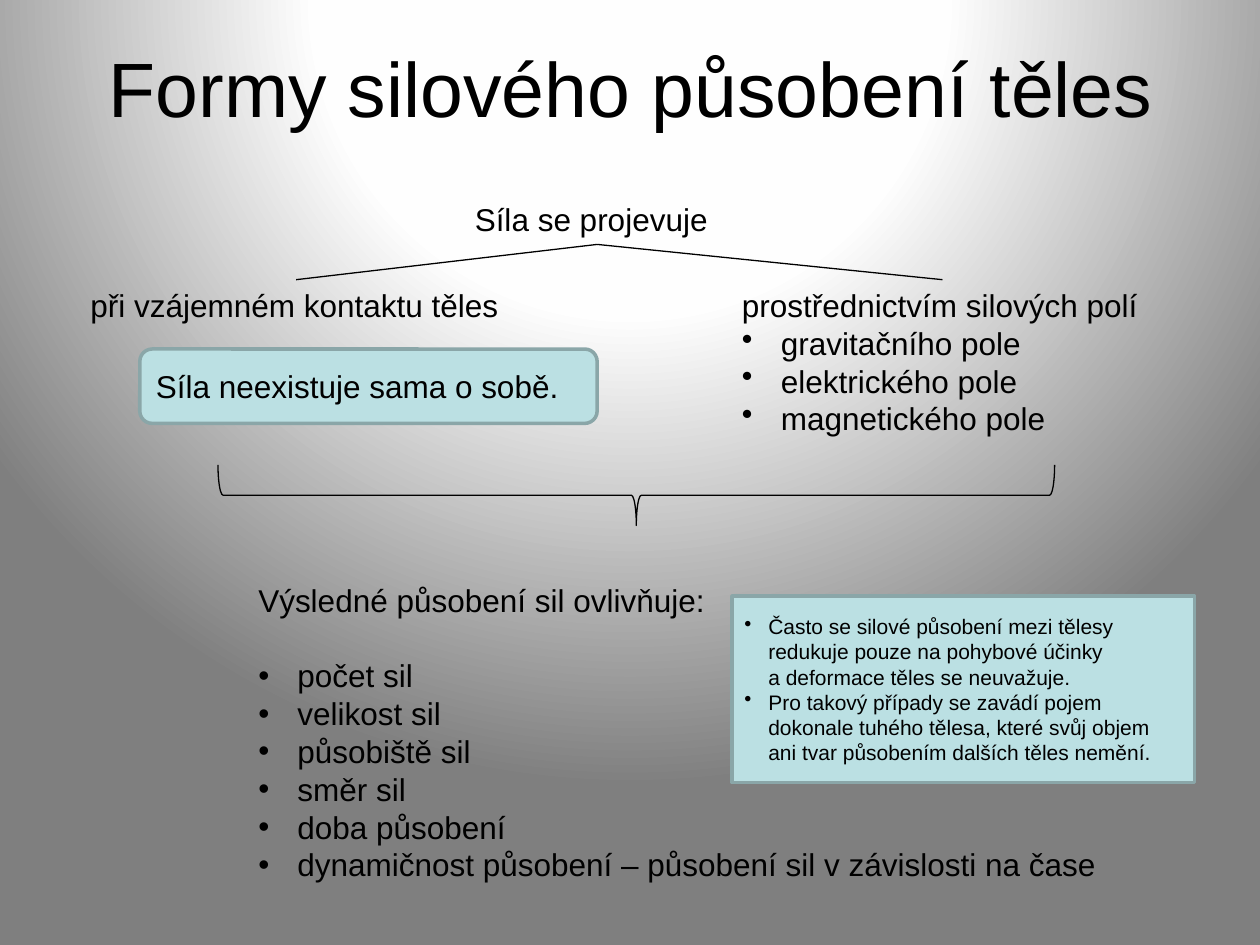
from dataclasses import dataclass

from pptx import Presentation
from pptx.dml.color import RGBColor
from pptx.enum.shapes import MSO_CONNECTOR, MSO_SHAPE
from pptx.enum.text import MSO_ANCHOR, MSO_AUTO_SIZE, PP_ALIGN
from pptx.oxml import parse_xml
from pptx.oxml.ns import nsdecls, qn
from pptx.util import Inches, Pt

RECT, ROUND, BRACE = MSO_SHAPE.RECTANGLE, MSO_SHAPE.ROUNDED_RECTANGLE, MSO_SHAPE.RIGHT_BRACE
LINE = MSO_CONNECTOR.STRAIGHT
TOP, MIDDLE = MSO_ANCHOR.TOP, MSO_ANCHOR.MIDDLE
LEFT, CENTER = PP_ALIGN.LEFT, PP_ALIGN.CENTER
NO_FIT = MSO_AUTO_SIZE.NONE


@dataclass(frozen=True)
class Theme:
    font: str = "Arial"
    ink: str = "000000"
    fill: str = "BBE0E3"
    edge: str = "8AA6A8"
    glow: tuple = ((0, "FFFFFF"), (40, "FEFEFE"), (100, "7F7F7F"))
    head: int = 44
    text: int = 18
    note: int = 12
    thin: float = 0.75
    thick: float = 2


@dataclass(frozen=True)
class Box:
    left: float
    top: float
    width: float
    height: float

    def lengths(self) -> list:
        return [Inches(v) for v in (self.left, self.top, self.width, self.height)]


@dataclass(frozen=True)
class Para:
    text: str
    indent: float = 0  # above zero means a bullet
    after: float = 0


@dataclass(frozen=True)
class Label:
    box: Box
    paras: list


@dataclass(frozen=True)
class Card:
    kind: int
    box: Box
    paras: list
    size: int


THEME = Theme()


def bullets(items: list, indent: float = 0.31) -> list:
    return [Para(item, indent) for item in items]


def set_bullet(para, indent: float) -> None:
    props = para._p.get_or_add_pPr()
    props.set("marL", str(Inches(indent)))
    props.set("indent", str(-Inches(indent)))
    mark = '<a:buChar %s char="•"/>' if indent else "<a:buNone %s/>"
    props.append(parse_xml(mark % nsdecls("a")))


def write(frame, paras: list, size: int, align=LEFT, anchor=TOP, wrap: bool = True) -> None:
    frame.auto_size = NO_FIT
    frame.word_wrap = wrap
    frame.vertical_anchor = anchor
    for i, item in enumerate(paras):
        para = frame.add_paragraph() if i else frame.paragraphs[0]
        para.alignment = align
        para.space_before, para.space_after = Pt(0), Pt(item.after)
        set_bullet(para, item.indent)
        for j, part in enumerate(item.text.split("\n")):
            if j:
                para.add_line_break()
            run = para.add_run()
            run.text = part
            run.font.name, run.font.size = THEME.font, Pt(size)
            run.font.color.rgb = RGBColor.from_string(THEME.ink)


def place(shape, box: Box) -> None:
    shape.left, shape.top, shape.width, shape.height = box.lengths()


def stroke(shape, color: str, width: float) -> None:
    shape.line.color.rgb = RGBColor.from_string(color)
    shape.line.width = Pt(width)


def paint_back(slide) -> None:
    fill = slide.background.fill
    fill.solid()
    stops = "".join(
        f'<a:gs pos="{pos * 1000}"><a:srgbClr val="{color}"/></a:gs>' for pos, color in THEME.glow
    )
    grad = parse_xml(
        f'<a:gradFill {nsdecls("a")} rotWithShape="1"><a:gsLst>{stops}</a:gsLst>'
        '<a:path path="circle"><a:fillToRect l="50000" t="-80000" r="50000" b="180000"/>'
        "</a:path></a:gradFill>"
    )
    props = slide.background._cSld.bg.bgPr
    props.replace(props.find(qn("a:solidFill")), grad)


def add_label(slide, label: Label) -> None:
    shape = slide.shapes.add_textbox(*label.box.lengths())
    write(shape.text_frame, label.paras, THEME.text, wrap=False)


def add_card(slide, card: Card) -> None:
    shape = slide.shapes.add_shape(card.kind, *card.box.lengths())
    shape.shadow.inherit = False
    shape.fill.solid()
    shape.fill.fore_color.rgb = RGBColor.from_string(THEME.fill)
    stroke(shape, THEME.edge, THEME.thick)
    write(shape.text_frame, card.paras, card.size, anchor=MIDDLE)


def add_brace(slide, box: Box) -> None:
    shape = slide.shapes.add_shape(BRACE, *box.lengths())
    shape.shadow.inherit = False
    shape.rotation = 90
    shape.fill.background()
    stroke(shape, THEME.ink, THEME.thin)


def add_branch(slide, start: tuple, end: tuple) -> None:
    line = slide.shapes.add_connector(LINE, *[Inches(v) for v in start + end])
    stroke(line, THEME.ink, THEME.thin)
    line._element.spPr.append(parse_xml(f'<a:effectLst {nsdecls("a")}/>'))


LABELS = [
    Label(Box(3.67, 1.54, 2.14, 0.4), [Para("Síla se projevuje")]),
    Label(Box(0.62, 2.22, 3.47, 0.4), [Para("při vzájemném kontaktu těles")]),
    Label(
        Box(5.79, 2.22, 3.37, 1.31),
        [Para("prostřednictvím silových polí")]
        + bullets(["gravitačního pole", "elektrického pole", "magnetického pole"]),
    ),
]

FACTORS = [Para("Výsledné působení sil ovlivňuje:", after=21.6)] + bullets([
    "počet sil",
    "velikost sil",
    "působiště sil",
    "směr sil",
    "doba působení",
    "dynamičnost působení – působení sil v závislosti na čase",
])

CARDS = [
    Card(ROUND, Box(1.11, 2.77, 3.63, 0.59), [Para("Síla neexistuje sama o sobě.")], THEME.text),
    Card(RECT, Box(5.81, 4.73, 3.67, 1.48), bullets([
        "Často se silové působení mezi tělesy redukuje pouze na pohybové účinky\n"
        "a deformace těles se neuvažuje.",
        "Pro takový případy se zavádí pojem dokonale tuhého tělesa, "
        "které svůj objem ani tvar působením dalších těles nemění.",
    ], 0.19), THEME.note),
]

FORK = (4.74, 1.94)
TIPS = [(2.35, 2.22), (7.48, 2.22)]


def main() -> None:
    deck = Presentation()
    deck.slide_width, deck.slide_height = Inches(10), Inches(7.5)
    slide = deck.slides.add_slide(deck.slide_layouts[1])
    paint_back(slide)

    # Title and list of factors
    title, body = slide.placeholders
    place(title, Box(0.02, 0.27, 9.98, 0.84))
    write(title.text_frame, [Para("Formy silového působení těles")], THEME.head, CENTER, MIDDLE)
    place(body, Box(1.95, 4.56, 6.92, 2.52))
    write(body.text_frame, FACTORS, THEME.text)

    # Two ways a force shows, joined by the brace
    for label in LABELS:
        add_label(slide, label)
    add_brace(slide, Box(4.81, 0.61, 0.48, 6.64))
    for card in CARDS:
        add_card(slide, card)
    for tip in TIPS:
        add_branch(slide, FORK, tip)

    deck.save("out.pptx")


if __name__ == "__main__":
    main()
